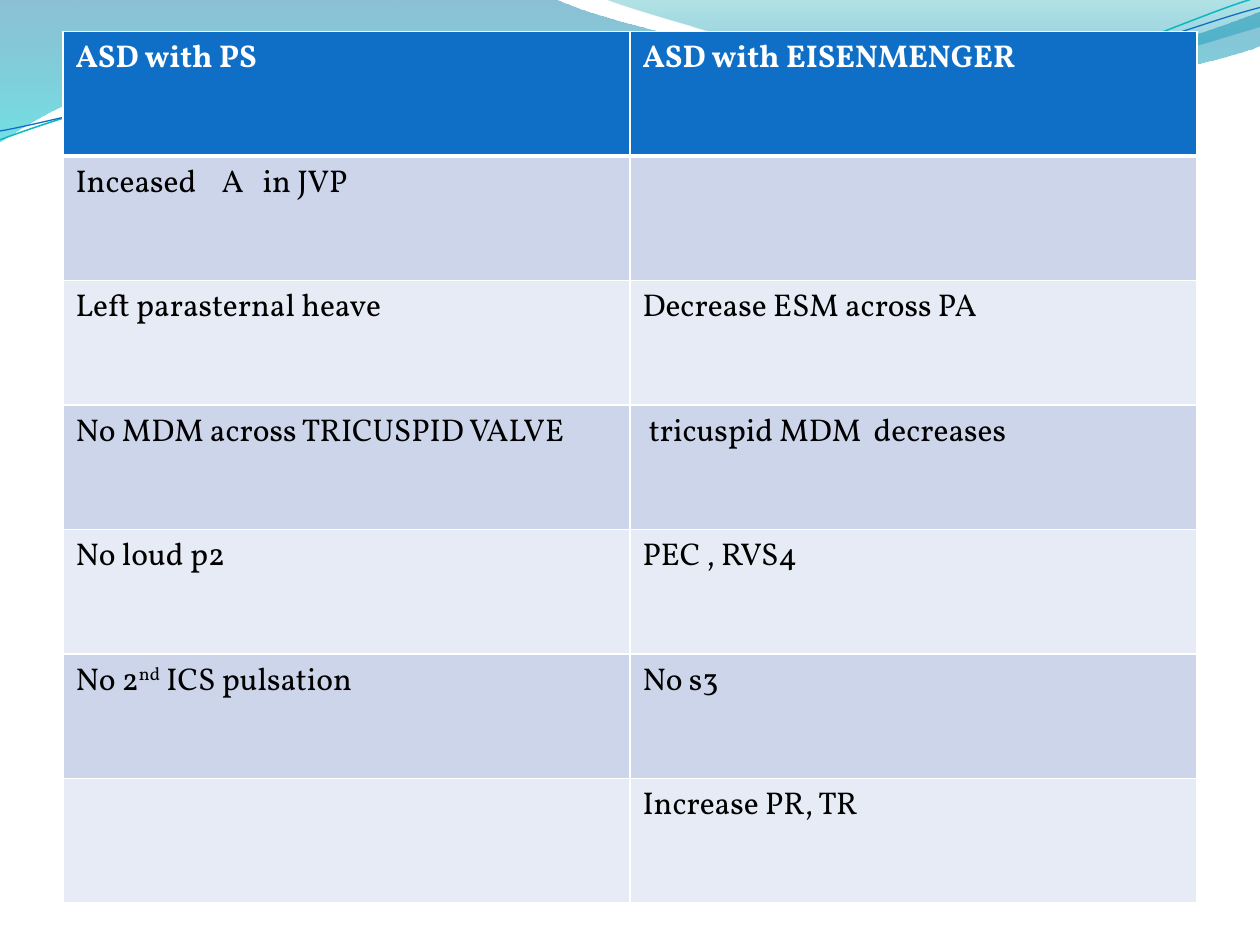
from math import cos, radians, sin

from pptx import Presentation
from pptx.dml.color import RGBColor
from pptx.oxml.ns import qn
from pptx.util import Inches, Pt
from lxml import etree

FONT = "Vollkorn"
WHITE, BLACK, BLUE = "FFFFFF", "000000", "0F6FC6"
BANDS = ["CCD5EA", "E7EBF5"]
TILT = 2.7

# Each cell is a list of (text, baseline percent) runs.
ROWS = [
    [[("ASD with PS", 0)], [("ASD with EISENMENGER", 0)]],
    [[("Inceased    A   in JVP", 0)], []],
    [[("Left parasternal heave", 0)], [("Decrease ESM across PA", 0)]],
    [[("No MDM across TRICUSPID VALVE", 0)], [(" tricuspid MDM  decreases", 0)]],
    [[("No loud p2", 0)], [("PEC , RVS4", 0)]],
    [[("No 2", 0), ("nd", 30), (" ICS pulsation", 0)], [("No s3", 0)]],
    [[], [("Increase PR, TR", 0)]],
]

# A step is a list of points: one for a straight line, three for a Bezier curve.
BAND = [
    [(0, 0)], [(4.4, -0.01)],
    [(4.76, 0.17), (6.64, 0.63), (7.58, 0.63)],
    [(8.53, 0.63), (9.58, 0.26), (10, 0.09)],
    [(10.01, 0.36)],
    [(9.83, 0.44), (8.7, 0.76), (7.46, 0.75)],
    [(6.22, 0.75), (3.82, 0.28), (2.57, 0.34)],
    [(1.29, 0.36), (0.46, 0.83), (-0.01, 1.13)],
]
CREST = [
    [(4.79, -0.01)],
    [(5.09, 0.11), (6.82, 0.62), (7.69, 0.65)],
    [(8.56, 0.69), (9.61, 0.32), (10, 0.21)],
    [(10, 0)],
]
TEAL_LINE = [
    [(0, 1.11)],
    [(0.48, 0.93), (1.58, 0.57), (2.77, 0.52)],
    [(3.95, 0.47), (5.93, 0.89), (7.13, 0.8)],
    [(8.33, 0.71), (9.38, 0.15), (9.98, -0.02)],
]
BLUE_LINE = [
    [(0, 1.04)],
    [(0.47, 0.96), (1.64, 0.61), (2.83, 0.56)],
    [(4.03, 0.51), (5.97, 0.84), (7.17, 0.75)],
    [(8.36, 0.67), (9.41, 0.21), (10, 0.06)],
]


def rgb(code):
    return RGBColor.from_string(code)


def turn(point):
    """Rotate a point clockwise by TILT about the middle of the lines."""
    x, y = point[0] - 5, point[1] - 0.58
    angle = radians(TILT)
    return (5 + x * cos(angle) - y * sin(angle),
            0.58 + x * sin(angle) + y * cos(angle))


def add_curve(slide, steps, closed):
    """Outline the end points, then bend the curved steps."""
    steps = [[(Inches(x), Inches(y)) for x, y in step] for step in steps]
    pen = slide.shapes.build_freeform(*steps[0][-1], scale=1.0)
    pen.add_line_segments([step[-1] for step in steps[1:]], close=closed)
    shape = pen.convert_to_shape()
    shape.shadow.inherit = False
    sides = list(shape._element.iter(qn("a:lnTo")))
    for side, step in zip(sides, steps[1:]):
        if len(step) == 3:
            bend = etree.Element(qn("a:cubicBezTo"))
            for x, y in step:
                etree.SubElement(bend, qn("a:pt"),
                                 x=str(x - shape.left), y=str(y - shape.top))
            side.getparent().replace(side, bend)
    return shape


def add_wave(slide, steps, stops):
    """Add a wave with a downward gradient of (position, colour, alpha) stops."""
    shape = add_curve(slide, steps, True)
    shape.line.fill.background()
    shape.fill.gradient()
    shape.fill.gradient_angle = 270
    for stop, (place, code, alpha) in zip(shape.fill.gradient_stops, stops):
        stop.position = place
        stop.color.rgb = rgb(code)
    tints = shape._element.spPr.iter(qn("a:srgbClr"))
    for tint, (place, code, alpha) in zip(tints, stops):
        etree.SubElement(tint, qn("a:alpha"), val=str(alpha * 1000))


def add_line(slide, steps, code, width):
    """Add a wavy line, laid out level and then tilted."""
    level = [[turn(point) for point in step] for step in steps]
    shape = add_curve(slide, level, False)
    shape.rotation = -TILT
    shape.fill.background()
    shape.line.color.rgb = rgb(code)
    shape.line.width = Pt(width)


def set_border(cell, base):
    """Give the cell white edges, with the bottom one of width base."""
    props = cell._tc.get_or_add_tcPr()
    edges = [("a:lnL", 1), ("a:lnR", 1), ("a:lnT", 1), ("a:lnB", base)]
    for spot, (tag, width) in enumerate(edges):
        edge = etree.Element(qn(tag), w=str(Pt(width)))
        fill = etree.SubElement(edge, qn("a:solidFill"))
        etree.SubElement(fill, qn("a:srgbClr"), val=WHITE)
        props.insert(spot, edge)


def fill_cell(cell, runs, head, back):
    cell.fill.solid()
    cell.fill.fore_color.rgb = rgb(back)
    set_border(cell, 3 if head else 1)
    para = cell.text_frame.paragraphs[0]
    for text, base in runs:
        run = para.add_run()
        run.text = text
        font = run.font
        font.name, font.size, font.bold = FONT, Pt(18), head
        font.color.rgb = rgb(WHITE if head else BLACK)
        if base:
            run._r.get_or_add_rPr().set("baseline", str(base * 1000))


def add_grid(slide):
    frame = slide.shapes.add_table(
        len(ROWS), 2, Inches(0.5), Inches(0.25), Inches(9), Inches(6.92))
    for r, row in enumerate(ROWS):
        back = BANDS[(r - 1) % 2] if r else BLUE
        for c, runs in enumerate(row):
            fill_cell(frame.table.cell(r, c), runs, r == 0, back)


def main():
    deck = Presentation()
    deck.slide_width, deck.slide_height = Inches(10), Inches(7.5)
    slide = deck.slides.add_slide(deck.slide_layouts[6])
    add_wave(slide, BAND, [(0, "0074A1", 45), (1, "00C6CF", 55)])
    add_wave(slide, CREST, [(0, "00A1A9", 30), (0.8, "008BBF", 45)])
    add_line(slide, TEAL_LINE, "0AB8BF", 0.85)
    add_line(slide, BLUE_LINE, BLUE, 0.75)
    add_grid(slide)
    deck.save("out.pptx")


if __name__ == "__main__":
    main()
